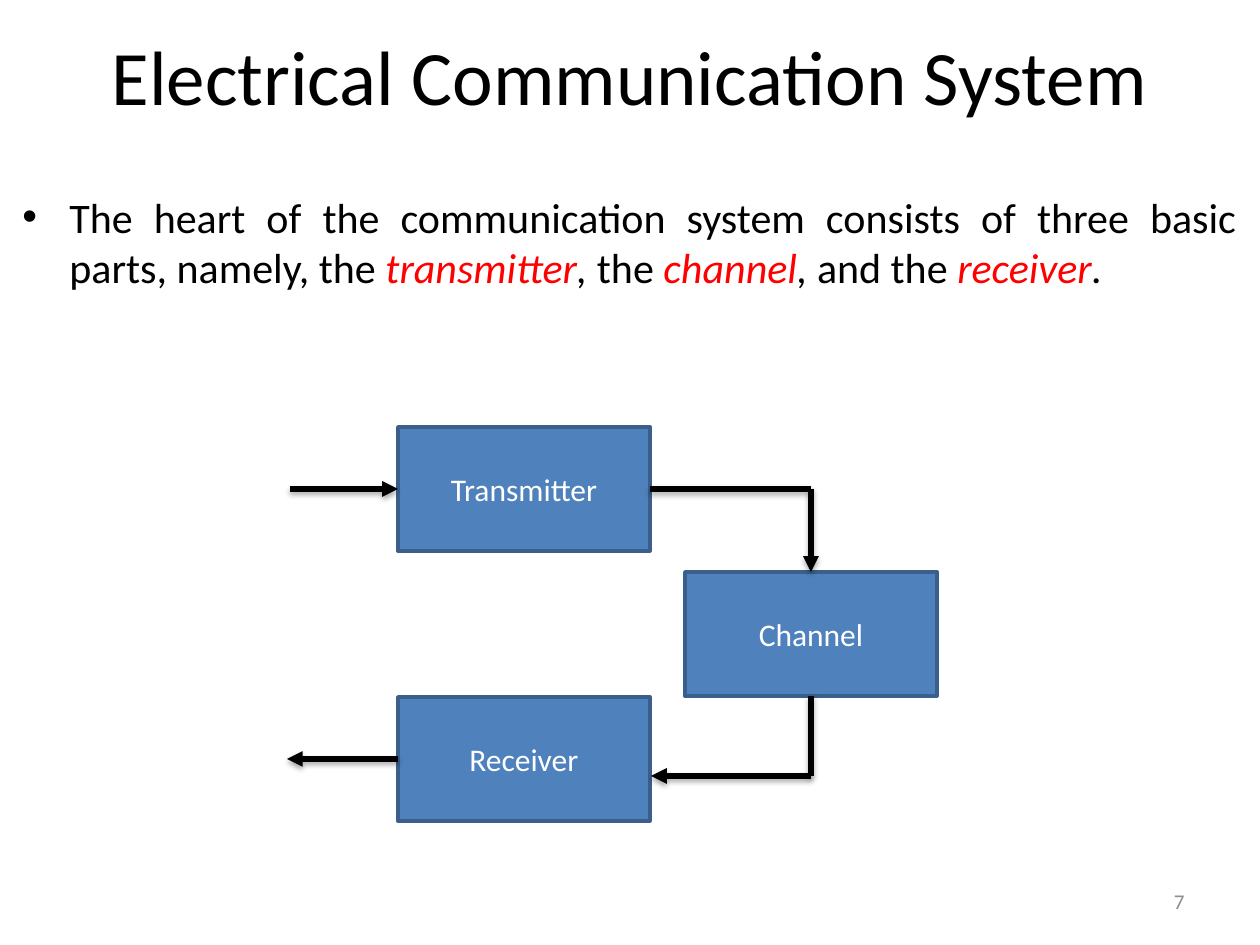
from dataclasses import dataclass

import pptx
import pptx.dml.color
import pptx.enum.shapes
import pptx.enum.text
import pptx.oxml
import pptx.oxml.ns
import pptx.util

ALIGN = pptx.enum.text.PP_ALIGN
ANCHOR = pptx.enum.text.MSO_ANCHOR
TOP, LEFT, BOTTOM, RIGHT = range(4)
EMU_PER_PX = 914400 / 126


@dataclass(frozen=True)
class Theme:
    font: str = "Calibri"
    ink: str = "000000"
    accent: str = "FF0000"
    muted: str = "8C8C8C"
    box_fill: str = "4F81BD"
    box_line: str = "3A5F8C"
    box_text: str = "FFFFFF"
    title_size: int = 44
    body_size: int = 24
    box_size: int = 18
    number_size: int = 12
    box_line_width: int = 2
    arrow_width: int = 3


THEME = Theme()

BODY = [
    ("The heart of the communication system consists of three basic parts, namely, the ", {}),
    ("transmitter", {"color": THEME.accent, "italic": True}),
    (", ", {"italic": True}),
    ("the ", {}),
    ("channel", {"color": THEME.accent, "italic": True}),
    (", ", {"italic": True}),
    ("and the ", {}),
    ("receiver", {"color": THEME.accent, "italic": True}),
    (".", {"italic": True}),
]


def px(length):
    return pptx.util.Emu(round(length * EMU_PER_PX))


def rgb(color):
    return pptx.dml.color.RGBColor.from_string(color)


def add_span(para, text, size, color, italic=False):
    span = para.add_run()
    span.text = text
    font_format = {"name": THEME.font, "size": pptx.util.Pt(size), "italic": italic}
    for name, value in font_format.items():
        setattr(span.font, name, value)
    span.font.color.rgb = rgb(color)


def add_text(page, area, spans, size, color, align, anchor=ANCHOR.MIDDLE):
    """Add a text box; each span is its text and its own format values."""
    box = page.shapes.add_textbox(*map(px, area))
    box.text_frame.word_wrap = True
    box.text_frame.vertical_anchor = anchor
    para = box.text_frame.paragraphs[0]
    para.alignment = align
    for text, values in spans:
        add_span(para, text, size, **{"color": color, **values})
    return para


def add_bullet(para, indent):
    para.space_before = pptx.util.Pt(4.8)
    properties = para._p.get_or_add_pPr()
    for name, value in {"marL": px(indent), "indent": -px(indent)}.items():
        properties.set(name, str(value))
    namespace = pptx.oxml.ns.nsdecls("a")
    for xml in (f'<a:buFont {namespace} typeface="Arial"/>', f'<a:buChar {namespace} char="•"/>'):
        properties.append(pptx.oxml.parse_xml(xml))


def add_block(page, label, left, top):
    block = page.shapes.add_shape(
        pptx.enum.shapes.MSO_SHAPE.RECTANGLE, px(left), px(top), px(252), px(124)
    )
    block.shadow.inherit = False
    block.fill.solid()
    block.fill.fore_color.rgb = rgb(THEME.box_fill)
    block.line.color.rgb = rgb(THEME.box_line)
    block.line.width = pptx.util.Pt(THEME.box_line_width)
    block.text_frame.vertical_anchor = ANCHOR.MIDDLE
    para = block.text_frame.paragraphs[0]
    para.alignment = ALIGN.CENTER
    add_span(para, label, THEME.box_size, THEME.box_text)
    return block


def add_line(page, start, end, arrow=False, begin_at=None, end_at=None):
    """Draw a shadowed line; begin_at and end_at are (block, side) pairs to join."""
    line = page.shapes.add_connector(
        pptx.enum.shapes.MSO_CONNECTOR.STRAIGHT, *map(px, (*start, *end))
    )
    line.line.color.rgb = rgb(THEME.ink)
    line.line.width = pptx.util.Pt(THEME.arrow_width)
    namespace = pptx.oxml.ns.nsdecls("a")
    if arrow:
        line.line._get_or_add_ln().append(
            pptx.oxml.parse_xml(f'<a:tailEnd {namespace} type="triangle"/>')
        )
    line._element.spPr.append(pptx.oxml.parse_xml(
        f'<a:effectLst {namespace}><a:outerShdw blurRad="40000" dist="23000" dir="5400000"'
        f' rotWithShape="0"><a:srgbClr val="{THEME.ink}"><a:alpha val="35000"/></a:srgbClr>'
        '</a:outerShdw></a:effectLst>'
    ))
    if begin_at:
        line.begin_connect(*begin_at)
    if end_at:
        line.end_connect(*end_at)


def add_diagram(page):
    transmitter = add_block(page, "Transmitter", 398, 427)
    channel = add_block(page, "Channel", 685, 572)
    receiver = add_block(page, "Receiver", 398, 697)
    upper_corner, lower_corner = (811, 489), (811, 776)

    add_line(page, (290, 489), (398, 489), arrow=True, end_at=(transmitter, LEFT))
    add_line(page, (650, 489), upper_corner, begin_at=(transmitter, RIGHT))
    add_line(page, upper_corner, (811, 572), arrow=True, end_at=(channel, TOP))
    add_line(page, (811, 696), lower_corner, begin_at=(channel, BOTTOM))
    add_line(page, lower_corner, (651, 776), arrow=True)
    add_line(page, (398, 759), (287, 759), arrow=True, begin_at=(receiver, LEFT))


def main():
    deck = pptx.Presentation()
    deck.slide_width, deck.slide_height = px(1260), px(945)
    page = deck.slides.add_slide(deck.slide_layouts[6])

    add_text(page, (63, 10, 1134, 130), [("Electrical Communication System", {})],
             THEME.title_size, THEME.ink, ALIGN.CENTER)
    body = add_text(page, (10, 185, 1239, 718), BODY,
                    THEME.body_size, THEME.ink, ALIGN.JUSTIFY, ANCHOR.TOP)
    add_bullet(body, 47)
    add_text(page, (903, 876, 294, 50), [("7", {})],
             THEME.number_size, THEME.muted, ALIGN.RIGHT)
    add_diagram(page)
    deck.save("out.pptx")


if __name__ == "__main__":
    main()
